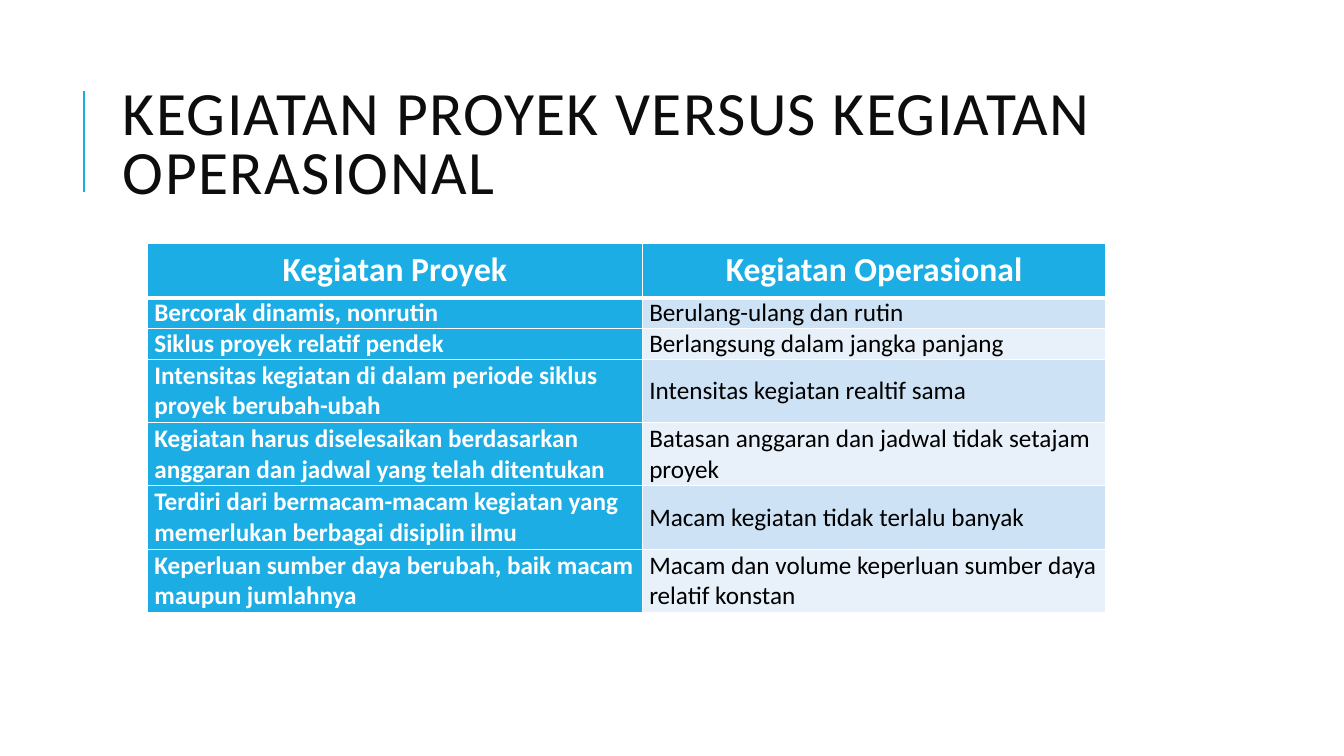
from lxml import etree
from pptx import Presentation
from pptx.dml.color import RGBColor
from pptx.enum import shapes, text
from pptx.oxml import ns
from pptx.util import Pt

FONT = "Calibri"
WHITE = RGBColor(0xFF, 0xFF, 0xFF)
BLACK = RGBColor(0, 0, 0)
INK = RGBColor(0x0D, 0x0D, 0x0D)
BLUE = RGBColor(0x1C, 0xAD, 0xE4)
BANDS = (RGBColor(0xCD, 0xE3, 0xF5), RGBColor(0xE8, 0xF1, 0xFA))

TITLE = "KEGIATAN PROYEK VERSUS KEGIATAN OPERASIONAL"
ROWS = [
    ("Kegiatan Proyek", "Kegiatan Operasional"),
    ("Bercorak dinamis, nonrutin", "Berulang-ulang dan rutin"),
    ("Siklus proyek relatif pendek", "Berlangsung dalam jangka panjang"),
    ("Intensitas kegiatan di dalam periode siklus proyek berubah-ubah",
     "Intensitas kegiatan realtif sama"),
    ("Kegiatan harus diselesaikan berdasarkan anggaran dan jadwal yang telah ditentukan",
     "Batasan anggaran dan jadwal tidak setajam proyek"),
    ("Terdiri dari bermacam-macam kegiatan yang memerlukan berbagai disiplin ilmu",
     "Macam kegiatan tidak terlalu banyak"),
    ("Keperluan sumber daya berubah, baik macam maupun jumlahnya",
     "Macam dan volume keperluan sumber daya relatif konstan"),
]
COL_WIDTHS = (353.5, 331.2)
ROW_HEIGHTS = (38.9, 21.9, 21.9, 45.2, 45.2, 45.2, 45.2)


def add_title(s, x, y, w, h):
    """Fill the title placeholder and draw the accent rule to its left."""
    rule_x = Pt(x - 20.7)
    rule = s.shapes.add_connector(shapes.MSO_CONNECTOR.STRAIGHT,
                                  rule_x, Pt(y + 90.7), rule_x, Pt(y + 18.7))
    rule.line.color.rgb = BLUE
    rule.line.width = Pt(1.5)
    etree.SubElement(rule._element.spPr, ns.qn("a:effectLst"))

    sp = s.shapes.title
    sp.left, sp.top, sp.width, sp.height = Pt(x), Pt(y), Pt(w), Pt(h)
    tf = sp.text_frame
    tf.text = TITLE
    tf.word_wrap = True
    tf.auto_size = text.MSO_AUTO_SIZE.NONE
    tf.vertical_anchor = text.MSO_ANCHOR.MIDDLE
    p = tf.paragraphs[0]
    p.alignment = text.PP_ALIGN.LEFT
    p.line_spacing = 0.8
    p.font.name, p.font.size, p.font.color.rgb = FONT, Pt(44), INK
    p.runs[0].font._element.set("spc", "100")


def set_borders(cell, top, bottom):
    """Give the cell white borders, with top and bottom widths in points."""
    tcPr = cell._tc.get_or_add_tcPr()
    widths = {"lnL": 1, "lnR": 1, "lnT": top, "lnB": bottom}
    for i, (side, width) in enumerate(widths.items()):
        ln = etree.Element(ns.qn(f"a:{side}"), w=str(Pt(width)))
        fill = etree.SubElement(ln, ns.qn("a:solidFill"))
        etree.SubElement(fill, ns.qn("a:srgbClr"), val=str(WHITE))
        tcPr.insert(i, ln)


def fill_cell(cell, words, row, col):
    header = row == 0
    strong = header or col == 0
    cell.fill.solid()
    cell.fill.fore_color.rgb = BLUE if strong else BANDS[(row - 1) % 2]
    cell.margin_left = cell.margin_right = Pt(5)
    cell.margin_top = cell.margin_bottom = 0
    cell.vertical_anchor = text.MSO_ANCHOR.MIDDLE
    set_borders(cell, top=3 if row == 1 else 1, bottom=3 if header else 1)
    cell.text = words
    p = cell.text_frame.paragraphs[0]
    p.alignment = text.PP_ALIGN.CENTER if header else text.PP_ALIGN.LEFT
    p.font.name, p.font.size = FONT, Pt(24 if header else 18)
    p.font.bold = strong
    p.font.color.rgb = WHITE if strong else BLACK


def add_comparison(s, x, y):
    tbl = s.shapes.add_table(len(ROWS), len(COL_WIDTHS), Pt(x), Pt(y),
                             Pt(sum(COL_WIDTHS)), Pt(sum(ROW_HEIGHTS))).table
    for column, width in zip(tbl.columns, COL_WIDTHS):
        column.width = Pt(width)
    for row, (height, entries) in enumerate(zip(ROW_HEIGHTS, ROWS)):
        tbl.rows[row].height = Pt(height)
        for col, words in enumerate(entries):
            fill_cell(tbl.cell(row, col), words, row, col)


def main():
    prs = Presentation()
    prs.slide_width, prs.slide_height = Pt(960), Pt(540)
    s = prs.slides.add_slide(prs.slide_layouts[5])
    add_title(s, 80.6, 46.1, 765.4, 118.1)
    add_comparison(s, 105.3, 173.8)
    prs.save("out.pptx")


if __name__ == "__main__":
    main()
